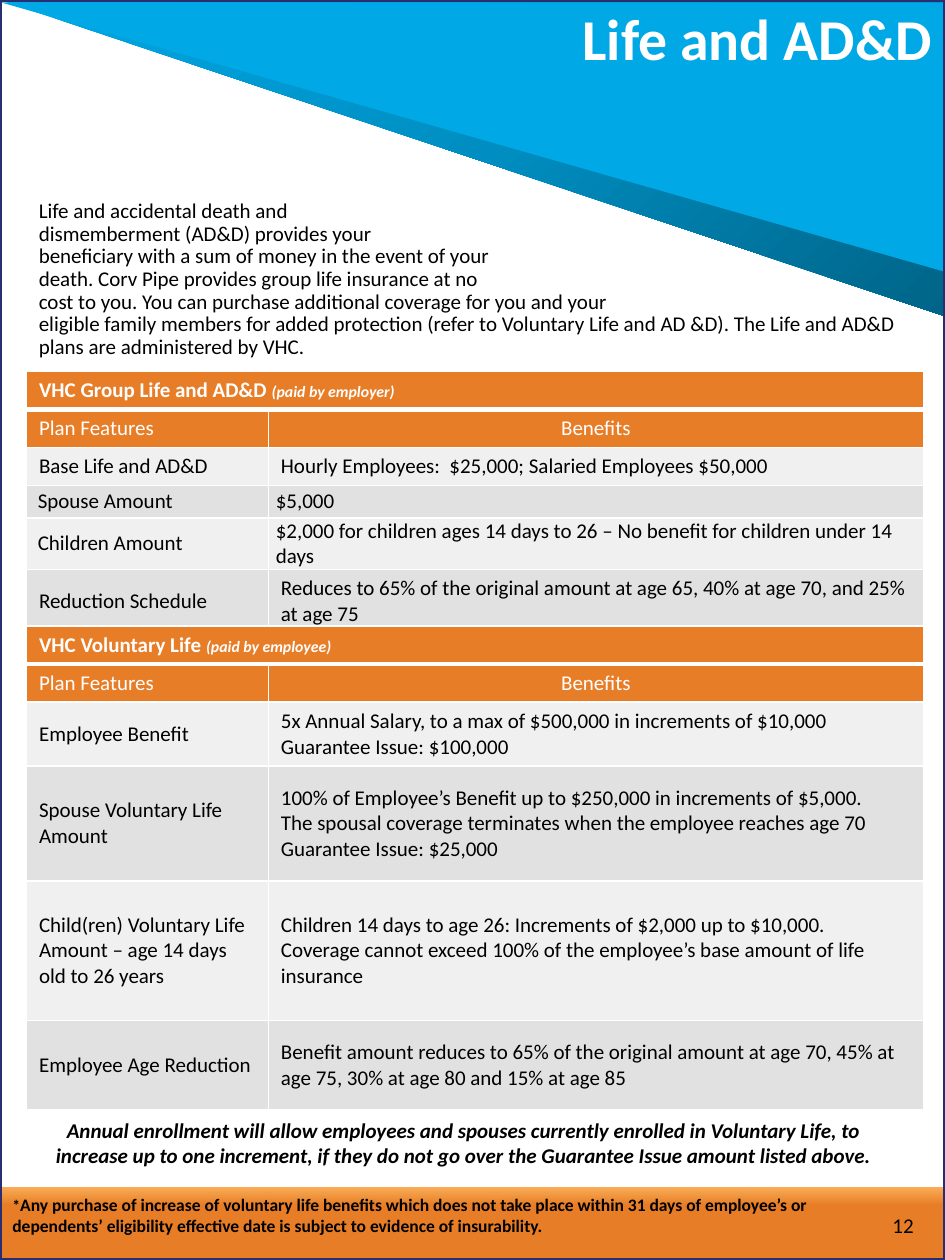
"""Builds the Life and AD&D benefits page with its two plan tables."""
from lxml.etree import SubElement as Sub
from pptx import Presentation as Deck
from pptx.dml.color import RGBColor as Rgb
from pptx.enum.shapes import MSO_SHAPE as Kind
from pptx.enum.text import MSO_ANCHOR as Anchor, PP_ALIGN as Align
from pptx.oxml.ns import qn
from pptx.util import Inches, Pt

HUES = {"ink": "000000", "white": "FFFFFF", "orange": "E87D27", "peach": "F9AD56",
        "sky": "00A8E6", "blue": "008EC2", "deep": "006488", "navy": "282E71",
        "pale": "F0F0F0", "grey": "E1E1E1"}
WIDE, HIGH = Inches(7.5), Inches(10)
PLAIN = {"name": "Calibri", "size": Pt(12), "bold": False, "italic": False}
BOLD = {"bold": True}
SMALL = {"size": Pt(9), "bold": True, "italic": True}


class Page:
    """Holds the style and the slide; boxes are (x, y, w, h) in percent of the slide."""

    def __init__(self, deck):
        self.slide = deck.slides.add_slide(deck.slide_layouts[6])
        self.shapes = self.slide.shapes

    def scale(self, box):
        return [round(v * side / 100) for v, side in zip(box, (WIDE, HIGH) * 2)]

    def shape(self, kind, box, fill=None, line=None, turn=0):
        item = self.shapes.add_shape(kind, *self.scale(box))
        item.shadow.inherit = False
        item.rotation = turn
        if fill:
            item.fill.solid()
            item.fill.fore_color.rgb = Rgb.from_string(HUES[fill])
        else:
            item.fill.background()
        if line:
            item.line.color.rgb = Rgb.from_string(HUES[line])
            item.line.width = Pt(2.5)
        else:
            item.line.fill.background()
        return item

    def blend(self, item, stops, ray=False):
        old = item._element.spPr.find(qn("a:noFill"))
        grad = old.makeelement(qn("a:gradFill"), {"rotWithShape": "1"})
        old.getparent().replace(old, grad)
        row = Sub(grad, qn("a:gsLst"))
        for spot, hue in stops:
            stop = Sub(row, qn("a:gs"), pos=str(spot * 1000))
            Sub(stop, qn("a:srgbClr"), val=HUES[hue])
        if ray:
            way = Sub(grad, qn("a:path"), {"path": "circle"})
            Sub(way, qn("a:fillToRect"), l="100000", t="100000")
        else:
            Sub(grad, qn("a:lin"), ang="5400000", scaled="0")

    def put(self, frame, paras, hue="ink", align=Align.LEFT, gap=1.0):
        for num, runs in enumerate(paras):
            para = frame.add_paragraph() if num else frame.paragraphs[0]
            para.alignment, para.line_spacing = align, gap
            for text, style in runs:
                for row, part in enumerate(text.split("\n")):
                    if row:
                        para.add_line_break()
                    run = para.add_run()
                    run.text = part
                    for key, val in {**PLAIN, **style}.items():
                        setattr(run.font, key, val)
                    run.font.color.rgb = Rgb.from_string(HUES[hue])

    def text(self, box, runs, anchor=Anchor.TOP, top=0.05, **style):
        frame = self.shapes.add_textbox(*self.scale(box)).text_frame
        frame.word_wrap = True
        frame.vertical_anchor, frame.margin_top = anchor, Inches(top)
        self.put(frame, [runs], **style)

    def edge(self, cell, **sides):
        props = cell._tc.get_or_add_tcPr()
        for num, side in enumerate("LRTB"):
            line = props.makeelement(qn("a:ln" + side), w=str(Pt(sides.get(side, 1))))
            Sub(Sub(line, qn("a:solidFill")), qn("a:srgbClr"), val=HUES["white"])
            props.insert(num, line)

    def cell(self, cell, paras, fill, tight=None, edges=None, **style):
        cell.fill.solid()
        cell.fill.fore_color.rgb = Rgb.from_string(HUES[fill])
        cell.vertical_anchor = Anchor.MIDDLE
        if tight:
            cell.margin_top = cell.margin_bottom = 0
            cell.margin_left, cell.margin_right = Inches(tight), Inches(0.06)
        self.put(cell.text_frame, paras, **style)
        self.edge(cell, **(edges or {}))

    def table(self, top, name, payer, rows):
        highs = [3, 3] + [row[0] for row in rows]
        box = self.scale((2.8, top, 94.93, sum(highs)))
        grid = self.shapes.add_table(len(highs), 2, *box).table
        for col, wide in zip(grid.columns, (25.6, 69.33)):
            col.width = round(wide * WIDE / 100)
        for row, high in zip(grid.rows, highs):
            row.height = round(high * HIGH / 100)
        grid.cell(0, 0).merge(grid.cell(0, 1))
        self.cell(grid.cell(0, 0), [[(name + " ", BOLD), (f"({payer})", SMALL)]],
                  "orange", edges={"B": 3}, hue="white")
        self.edge(grid.cell(0, 1), B=3)
        heads = ("Plan Features", Align.LEFT), ("Benefits", Align.CENTER)
        for col, (head, align) in enumerate(heads):
            self.cell(grid.cell(1, col), [[(head, {})]], "orange",
                      edges={"T": 3}, hue="white", align=align)
        for num, (high, label, lines, tight) in enumerate(rows):
            fill = ("pale", "grey")[num % 2]
            pads = (0.09, 0.06) if tight else (None, None)
            for col, paras in enumerate(([label], lines)):
                self.cell(grid.cell(num + 2, col), [[(p, {})] for p in paras],
                          fill, pads[col])


GROUP = [
    (3, "Base Life and AD&D", ["Hourly Employees:  $25,000; Salaried Employees $50,000"], False),
    (2.6, "Spouse Amount", ["$5,000"], True),
    (4.1, "Children Amount",
     ["$2,000 for children ages 14 days to 26 – No benefit for children under 14 days"], True),
    (5, "Reduction Schedule",
     ["Reduces to 65% of the original amount at age 65, 40% at age 70, and 25% at age 75"], False),
]
CHOICE = [
    (5.1, "Employee Benefit",
     ["5x Annual Salary, to a max of $500,000 in increments of $10,000",
      "Guarantee Issue: $100,000"], False),
    (9.1, "Spouse Voluntary Life Amount",
     ["100% of Employee’s Benefit up to $250,000 in increments of $5,000.",
      "The spousal coverage terminates when the employee reaches age 70",
      "Guarantee Issue: $25,000"], False),
    (11.1, "Child(ren) Voluntary Life Amount – age 14 days old to 26 years",
     ["Children 14 days to age 26: Increments of $2,000 up to $10,000.",
      "Coverage cannot exceed 100% of the employee’s base amount of life insurance"], False),
    (7.1, "Employee Age Reduction",
     ["Benefit amount reduces to 65% of the original amount at age 70, 45% at age 75, "
      "30% at age 80 and 15% at age 85"], False),
]
INTRO = """Life and accidental death and
dismemberment (AD&D) provides your
beneficiary with a sum of money in the event of your
death. Corv Pipe provides group life insurance at no
cost to you. You can purchase additional coverage for you and your
eligible family members for added protection (refer to Voluntary Life and AD &D). \
The Life and AD&D plans are administered by VHC."""
ENROLL = ("Annual enrollment will allow employees and spouses currently enrolled in Voluntary "
          "Life, to increase up to one increment, if they do not go over the Guarantee Issue "
          "amount listed above.")
NOTE = ("Any purchase of increase of voluntary life benefits which does not take place within "
        "31 days of employee’s or dependents’ eligibility effective date is subject to "
        "evidence of insurability.")


def main():
    deck = Deck()
    deck.slide_width, deck.slide_height = WIDE, HIGH
    page = Page(deck)
    band = page.shape(Kind.RECTANGLE, (0, 94.2, 100, 3.8))
    page.blend(band, [(0, "peach"), (38, "orange")])
    shade = page.shape(Kind.RIGHT_TRIANGLE, (0, 0, 100, 25.1), turn=180)
    page.blend(shade, [(0, "deep"), (50, "blue"), (100, "sky")], ray=True)
    page.shape(Kind.RIGHT_TRIANGLE, (0.13, 0.2, 100, 21.4), "sky", turn=180)
    page.shape(Kind.RECTANGLE, (0, 96.2, 100, 3.8), "orange")
    page.shape(Kind.RECTANGLE, (0, 0, 100, 100), line="navy")
    page.text((13.73, 0.3, 86.27, 6), [("Life and AD&D", {"size": Pt(33), "bold": True})],
              Anchor.MIDDLE, hue="white", align=Align.RIGHT, gap=0.9)
    page.text((2.8, 12.6, 94.53, 47.2), [(INTRO, {})], top=0.33, gap=0.9)
    page.table(29.5, "VHC Group Life and AD&D", "paid by employer", GROUP)
    page.table(49.7, "VHC Voluntary Life", "paid by employee", CHOICE)
    page.text((0, 94.3, 94.4, 4.4), [("*", {"size": Pt(9), "bold": True}),
                                     (NOTE, {"size": Pt(10), "bold": True})])
    page.text((1.87, 88.2, 94.4, 5), [(ENROLL, {"bold": True, "italic": True})],
              align=Align.CENTER)
    page.text((75.47, 95.6, 22.53, 3.3), [("12", {})], Anchor.MIDDLE, align=Align.RIGHT)
    deck.save("out.pptx")


if __name__ == "__main__":
    main()
